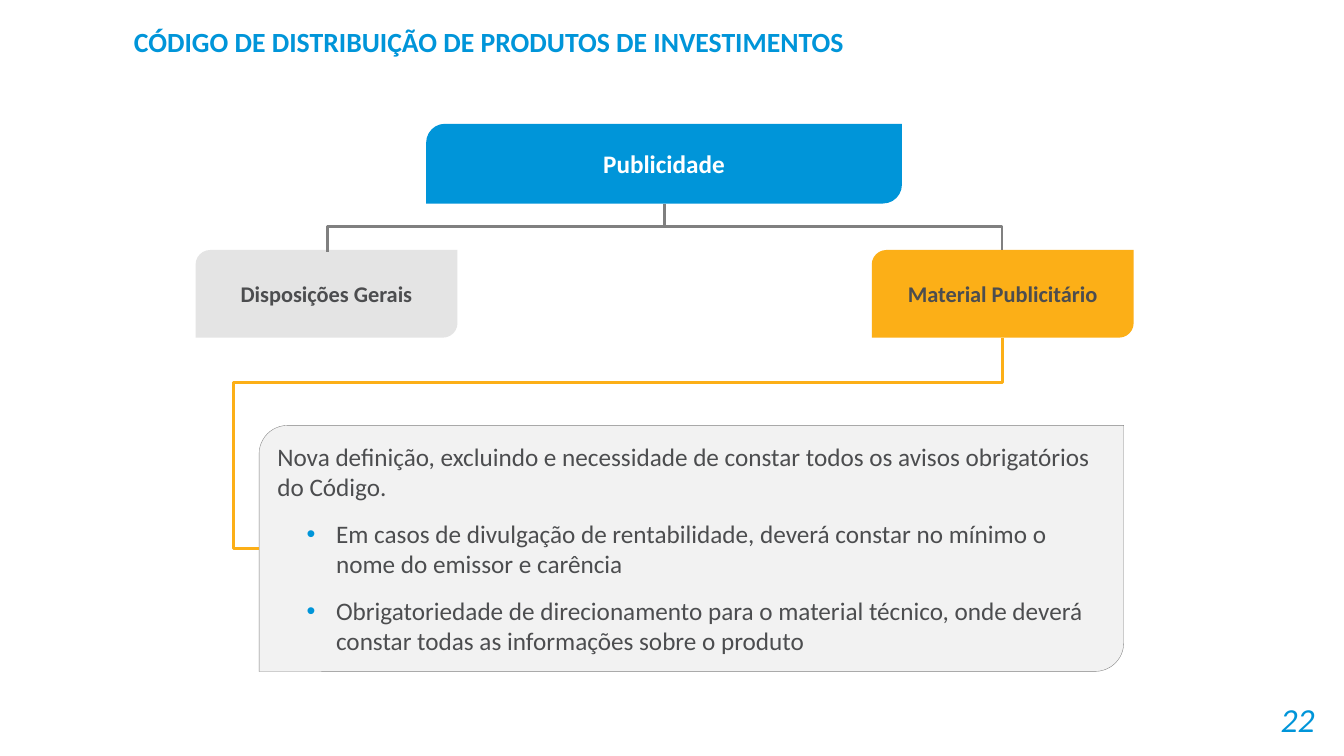
from lxml import etree
from pptx import Presentation
from pptx.dml.color import RGBColor
from pptx.enum import shapes, text
from pptx.oxml import ns
from pptx.util import Cm, Pt

BLUE = RGBColor(0x00, 0x95, 0xD9)
AMBER = RGBColor(0xFC, 0xAF, 0x17)
SILVER = RGBColor(0xE4, 0xE4, 0xE4)
PALE = RGBColor(0xF2, 0xF2, 0xF2)
GRAY = RGBColor(0x80, 0x80, 0x80)
STEM_GRAY = RGBColor(0x7F, 0x7F, 0x7F)
INK = RGBColor(0x4C, 0x4D, 0x4F)
WHITE = RGBColor(0xFF, 0xFF, 0xFF)
LEFT, CENTER, RIGHT = text.PP_ALIGN.LEFT, text.PP_ALIGN.CENTER, text.PP_ALIGN.RIGHT


class SlideBuilder:
    font_name = "Calibri"
    line_width = Pt(2)

    def __init__(self, deck):
        self.slide = deck.slides.add_slide(deck.slide_layouts[5])

    def prepare(self, frame):
        frame.word_wrap = True
        frame.auto_size = text.MSO_AUTO_SIZE.NONE
        frame.vertical_anchor = text.MSO_ANCHOR.MIDDLE

    def add_text(self, paragraph, wording, size, color, align=LEFT, bold=False, italic=False):
        paragraph.alignment = align
        run = paragraph.add_run()
        run.text = wording
        font = run.font
        font.name, font.size, font.bold, font.italic = self.font_name, Pt(size), bold, italic
        font.color.rgb = color

    def title(self, wording, left, top, width, height):
        heading = self.slide.shapes.title
        heading.left, heading.top = Cm(left), Cm(top)
        heading.width, heading.height = Cm(width), Cm(height)
        self.prepare(heading.text_frame)
        paragraph = heading.text_frame.paragraphs[0]
        paragraph.line_spacing = 1.0
        self.add_text(paragraph, wording, 19.8, BLUE, bold=True)

    def page_number(self, wording, left, top, width, height):
        number = self.slide.shapes.add_textbox(Cm(left), Cm(top), Cm(width), Cm(height))
        self.prepare(number.text_frame)
        self.add_text(number.text_frame.paragraphs[0], wording, 24, BLUE, RIGHT, italic=True)

    def panel(self, left, top, width, height, fill, rounding=0.167, outline=None):
        """Add a box with two opposite rounded corners and return its text frame."""
        box = self.slide.shapes.add_shape(
            shapes.MSO_SHAPE.ROUND_2_DIAG_RECTANGLE, Cm(left), Cm(top), Cm(width), Cm(height))
        box.shadow.inherit = False
        box.adjustments[0] = rounding
        box.fill.solid()
        box.fill.fore_color.rgb = fill
        if outline is None:
            box.line.fill.background()
        else:
            box.line.color.rgb = outline
            box.line.width = Pt(0.25)
        self.prepare(box.text_frame)
        return box.text_frame

    def label(self, wording, left, top, width, height, fill, color, size, rounding=0.167):
        frame = self.panel(left, top, width, height, fill, rounding)
        self.add_text(frame.paragraphs[0], wording, size, color, CENTER, bold=True)

    def details(self, intro, points, left, top, width, height):
        frame = self.panel(left, top, width, height, PALE, 0.116, GRAY)
        for index, wording in enumerate([intro, *points]):
            paragraph = frame.add_paragraph() if index else frame.paragraphs[0]
            if index:
                self.bullet(paragraph)
            paragraph.space_after = Pt(12)
            self.add_text(paragraph, wording, 18, INK)

    def bullet(self, paragraph):
        properties = paragraph._p.get_or_add_pPr()
        properties.set("marL", str(Cm(1.48)))
        properties.set("indent", str(-Cm(0.74)))
        color = etree.SubElement(properties, ns.qn("a:buClr"))
        etree.SubElement(color, ns.qn("a:srgbClr"), val=str(BLUE))
        etree.SubElement(properties, ns.qn("a:buFont"), typeface="Arial")
        etree.SubElement(properties, ns.qn("a:buChar"), char="•")

    def connector(self, start, end, color, kind=shapes.MSO_CONNECTOR.STRAIGHT):
        link = self.slide.shapes.add_connector(kind, *map(Cm, (*start, *end)))
        link.line.color.rgb = color
        link.line.width = self.line_width
        etree.SubElement(link._element.spPr, ns.qn("a:effectLst"))
        return link

    def elbow(self, start, end, color, bends):
        """Leave start vertically, turning at the given fractions of the height and width.

        The run goes from upper right to lower left, or the reverse.
        """
        link = self.connector(start, end, color, shapes.MSO_CONNECTOR.ELBOW)
        across, down = abs(end[0] - start[0]), abs(end[1] - start[1])
        middle_x, middle_y = (start[0] + end[0]) / 2, (start[1] + end[1]) / 2
        link.left, link.top = Cm(middle_x - down / 2), Cm(middle_y - across / 2)
        link.width, link.height = Cm(down), Cm(across)
        properties = link._element.spPr
        frame = properties.find(ns.qn("a:xfrm"))
        flip = "1" if start[0] < end[0] else "0"
        for key, value in (("rot", "5400000"), ("flipH", flip), ("flipV", flip)):
            frame.set(key, value)
        geometry = properties.find(ns.qn("a:prstGeom"))
        geometry.set("prst", f"bentConnector{len(bends) + 2}")
        guides = geometry.find(ns.qn("a:avLst"))
        for number, bend in enumerate(bends, 1):
            etree.SubElement(guides, ns.qn("a:gd"), name=f"adj{number}",
                             fmla=f"val {round(bend * 100000)}")


def main():
    deck = Presentation()
    deck.slide_width, deck.slide_height = Cm(33.87), Cm(19.05)
    page = SlideBuilder(deck)

    page.title("CÓDIGO DE DISTRIBUIÇÃO DE PRODUTOS DE INVESTIMENTOS", 3.12, 0.3, 18.62, 1.47)
    page.page_number("22", 24.87, 17.6, 8.51, 1.02)
    page.label("Publicidade", 10.74, 3.12, 11.99, 2.01, BLUE, WHITE, 18, 0.237)
    page.details(
        "Nova definição, excluindo e necessidade de constar todos os avisos obrigatórios do Código.",
        ["Em casos de divulgação de rentabilidade, deverá constar no mínimo o nome do emissor "
         "e carência",
         "Obrigatoriedade de direcionamento para o material técnico, onde deverá constar todas "
         "as informações sobre o produto"],
        6.53, 10.72, 21.79, 6.2)
    page.elbow((25.27, 8.53), (6.53, 13.82), AMBER, [0.208, 1.034])
    for topic, left, fill in (("Disposições Gerais", 4.93, SILVER),
                              ("Material Publicitário", 21.97, AMBER)):
        page.label(topic, left, 6.3, 6.6, 2.21, fill, INK, 16)
    page.elbow((8.26, 6.35), (25.25, 6.31), GRAY, [16])
    page.connector((16.74, 5.13), (16.74, 5.74), STEM_GRAY)

    deck.save("out.pptx")


if __name__ == "__main__":
    main()
